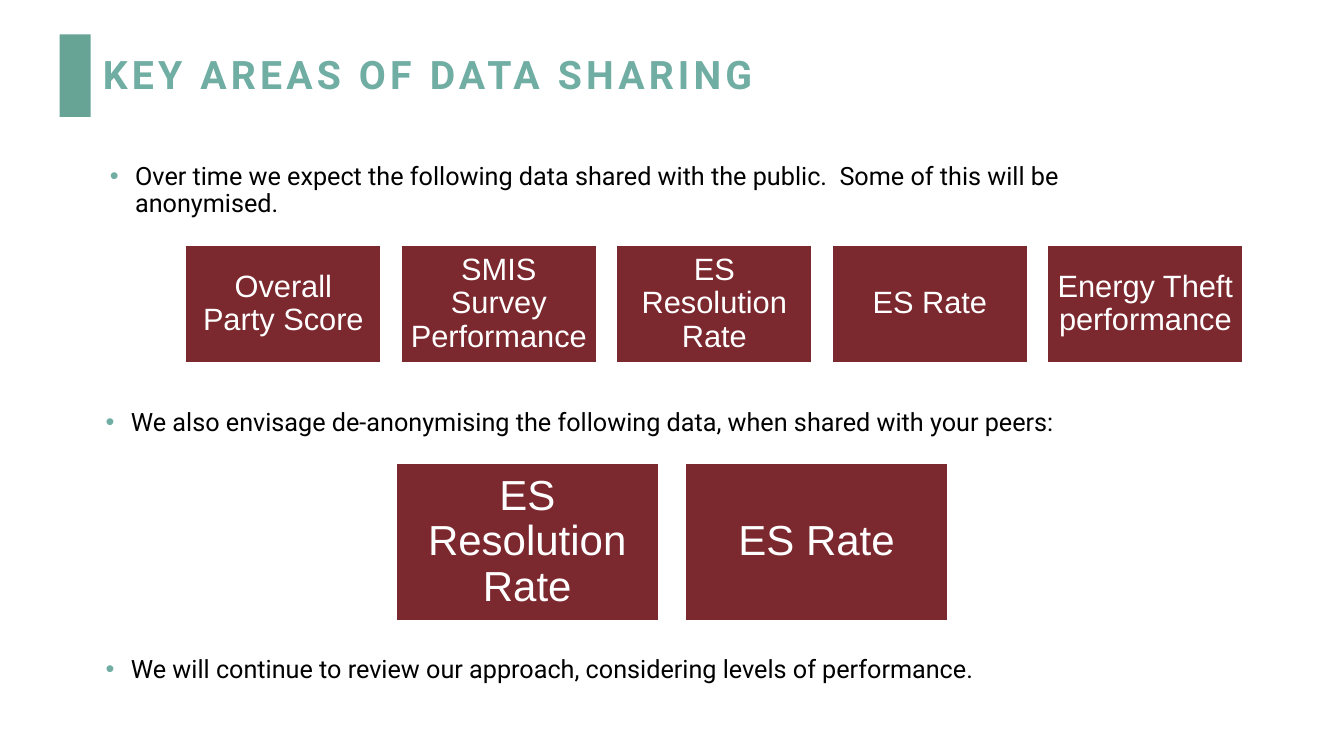
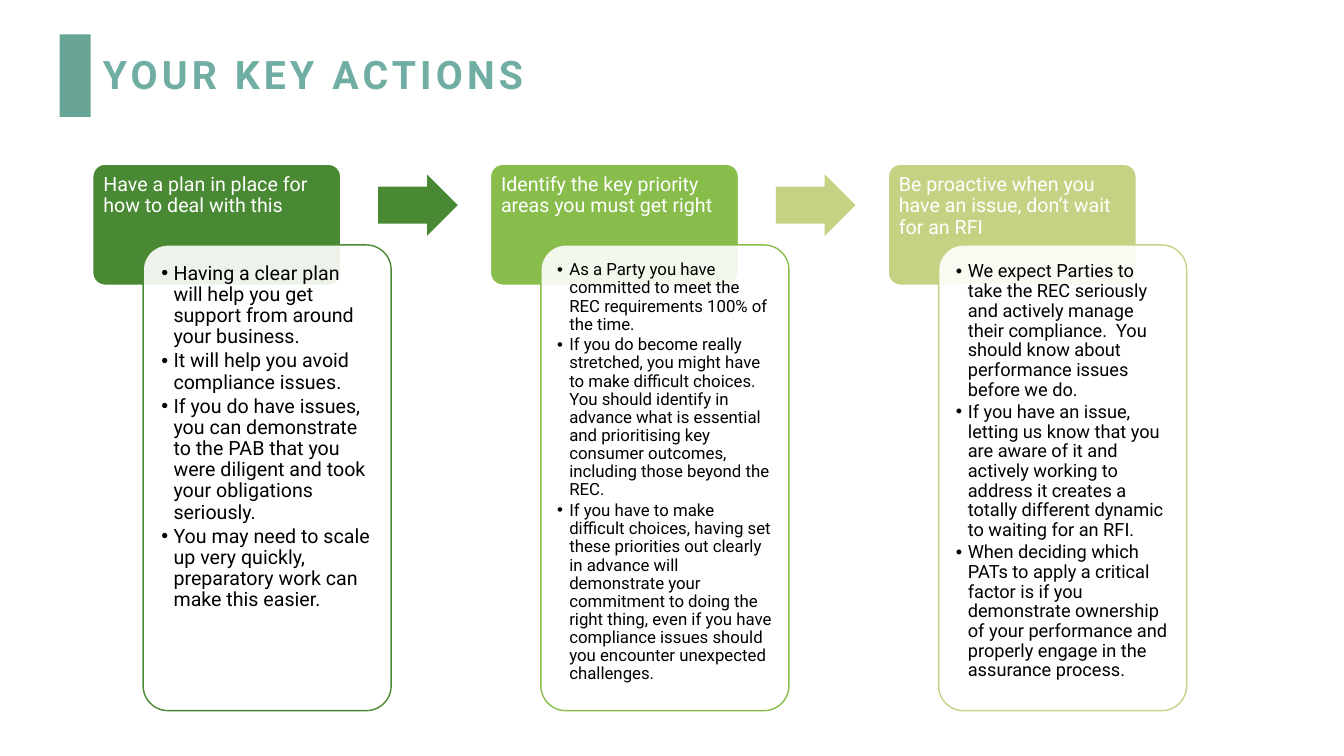
import pptx
import pptx.dml.color
import pptx.enum.shapes
import pptx.enum.text
import pptx.oxml.ns
import pptx.util
from dataclasses import dataclass
from lxml import etree

Inches = pptx.util.Inches
Pt = pptx.util.Pt
Shape = pptx.enum.shapes.MSO_SHAPE
Anchor = pptx.enum.text.MSO_ANCHOR
Align = pptx.enum.text.PP_ALIGN
qn = pptx.oxml.ns.qn


@dataclass(frozen=True)
class Theme:
    band: str = "68A495"
    accent: str = "70ADA3"
    tile: str = "7B282E"
    dark_green: str = "498934"
    green: str = "88BD4C"
    pale_green: str = "C4D383"
    white: str = "FFFFFF"
    black: str = "000000"
    font: str = "Roboto"
    tile_font: str = "Arial"
    title_size: int = 28
    title_tracking: int = 3
    body_size: int = 18
    header_size: int = 14
    line_spacing: float = 0.9


THEME = Theme()
TITLE_ONLY, TITLE_AND_CONTENT = 5, 1

BAND = (0.59, 0.34, 0.31, 0.82)
TITLE = (0.92, 0.4, 10.15, 0.72)

SHARING = {
    "title": "KEY AREAS OF DATA SHARING",
    "intro": ((0.99, 1.57, 10.08, 0.87),
              "Over time we expect the following data shared with the public.  "
              "Some of this will be anonymised."),
    "statements": [
        ((0.95, 4.02, 10.08, 0.4),
         "We also envisage de-anonymising the following data, when shared with your peers:"),
        ((0.95, 6.47, 10.08, 0.4),
         "We will continue to review our approach, considering levels of performance."),
    ],
    "tile_rows": [
        {"labels": ["Overall Party Score", "SMIS Survey Performance", "ES Resolution Rate",
                    "ES Rate", "Energy Theft performance"],
         "left": 1.84, "right": 12.33, "top": 2.43, "width": 1.94, "height": 1.17,
         "size": 22, "margin": 0.09},
        {"labels": ["ES Resolution Rate", "ES Rate"],
         "left": 3.93, "right": 9.4, "top": 4.6, "width": 2.6, "height": 1.56,
         "size": 30, "margin": 0.12},
    ],
}

ACTIONS_TITLE = "YOUR KEY ACTIONS"
ACTIONS = [
    {"header": "Have a plan in place for how to deal with this",
     "colour": THEME.dark_green, "arrow": THEME.dark_green, "size": 14, "margin": 0.11,
     "points": [
         "Having a clear plan will help you get support from around your business.",
         "It will help you avoid compliance issues.",
         "If you do have issues, you can demonstrate to the PAB that you were diligent "
         "and took your obligations seriously.",
         "You may need to scale up very quickly, preparatory work can make this easier."]},
    {"header": "Identify the key priority areas you must get right",
     "colour": THEME.green, "arrow": THEME.pale_green, "size": 12, "margin": 0.09,
     "points": [
         "As a Party you have committed to meet the REC requirements 100% of the time.",
         "If you do become really stretched, you might have to make difficult choices.  "
         "You should identify in advance what is essential and prioritising key consumer "
         "outcomes, including those beyond the REC.",
         "If you have to make difficult choices, having set these priorities out clearly in "
         "advance will demonstrate your commitment to doing the right thing, even if you have "
         "compliance issues should you encounter unexpected challenges."]},
    {"header": "Be proactive when you have an issue, don’t wait for an RFI",
     "colour": THEME.pale_green, "arrow": None, "size": 13, "margin": 0.1,
     "points": [
         "We expect Parties to take the REC seriously and actively manage their compliance.  "
         "You should know about performance issues before we do.",
         "If you have an issue, letting us know that you are aware of it and actively working "
         "to address it creates a totally different dynamic to waiting for an RFI.",
         "When deciding which PATs to apply a critical factor is if you demonstrate ownership "
         "of your performance and properly engage in the assurance process."]},
]
FIRST_COLUMN, LAST_COLUMN = 0.92, 8.81
HEADER_TOP, HEADER_WIDTH, HEADER_HEIGHT = 1.63, 2.46, 1.2
CARD_SHIFT, CARD_TOP, CARD_HEIGHT = 0.5, 2.43, 4.62
ARROW_SHIFT, ARROW_TOP, ARROW_WIDTH, ARROW_HEIGHT = 2.83, 1.73, 0.79, 0.61


def rgb(colour):
    return pptx.dml.color.RGBColor.from_string(colour)


def place(box, area):
    box.left, box.top, box.width, box.height = map(Inches, area)


def add_block(page, preset, area, fill, line=None):
    block = page.shapes.add_shape(preset, *map(Inches, area))
    block.shadow.inherit = False
    block.fill.solid()
    block.fill.fore_color.rgb = rgb(fill)
    if line:
        block.line.color.rgb = rgb(line)
        block.line.width = Pt(1)
    else:
        block.line.fill.background()
    return block


def add_bullet(para, indent, colour):
    properties = para._p.get_or_add_pPr()
    properties.set("marL", str(Inches(indent)))
    properties.set("indent", str(-Inches(indent)))
    tint = etree.SubElement(properties, qn("a:buClr"))
    etree.SubElement(tint, qn("a:srgbClr")).set("val", colour)
    etree.SubElement(properties, qn("a:buFont")).set("typeface", "Arial")
    etree.SubElement(properties, qn("a:buChar")).set("char", "•")


def write(box, lines, size, colour, font=THEME.font, bold=False, align=Align.LEFT,
          anchor=Anchor.TOP, margins=None, bullet=None, gap=0):
    """Fill a box with paragraphs; bullet is (indent, colour), margins are in inches."""
    frame = box.text_frame
    frame.text = "\n".join(lines)
    frame.word_wrap = True
    frame.auto_size = pptx.enum.text.MSO_AUTO_SIZE.NONE
    frame.vertical_anchor = anchor
    if margins:
        (frame.margin_left, frame.margin_top,
         frame.margin_right, frame.margin_bottom) = map(Inches, margins)
    for para in frame.paragraphs:
        if bullet:
            add_bullet(para, *bullet)
        para.alignment = align
        para.line_spacing = THEME.line_spacing
        para.space_before = Pt(0)
        para.space_after = Pt(gap)
        for span in para.runs:
            span.font.name = font
            span.font.size = Pt(size)
            span.font.bold = bold
            span.font.color.rgb = rgb(colour)


def add_page(deck, layout, title):
    page = deck.slides.add_slide(deck.slide_layouts[layout])
    heading = page.shapes.title
    place(heading, TITLE)
    write(heading, [title], THEME.title_size, THEME.accent, bold=True, anchor=Anchor.MIDDLE)
    for span in heading.text_frame.paragraphs[0].runs:
        span._r.get_or_add_rPr().set("spc", str(THEME.title_tracking * 100))
    return page


def move_to_master(deck, shape):
    shape.element.nvSpPr.cNvPr.set("id", "50")
    deck.slide_master.element.cSld.spTree.insert(2, shape.element)


def add_tile_row(page, row):
    count = len(row["labels"])
    pitch = (row["right"] - row["left"] - row["width"]) / (count - 1)
    for index, label in enumerate(row["labels"]):
        area = (row["left"] + index * pitch, row["top"], row["width"], row["height"])
        tile = add_block(page, Shape.RECTANGLE, area, THEME.tile, THEME.white)
        write(tile, [label], row["size"], THEME.white, THEME.tile_font, align=Align.CENTER,
              anchor=Anchor.MIDDLE, margins=[row["margin"]] * 4)


def add_statement(box, text):
    write(box, [text], THEME.body_size, THEME.black, bullet=(0.25, THEME.accent))


def add_action(page, left, action):
    header = add_block(page, Shape.ROUNDED_RECTANGLE,
                       (left, HEADER_TOP, HEADER_WIDTH, HEADER_HEIGHT),
                       action["colour"], THEME.white)
    header.adjustments[0] = 0.1
    write(header, [action["header"]], THEME.header_size, THEME.white,
          margins=(0.07, 0.07, 0.07, 0.06))

    card = add_block(page, Shape.ROUNDED_RECTANGLE,
                     (left + CARD_SHIFT, CARD_TOP, HEADER_WIDTH, CARD_HEIGHT),
                     THEME.white, action["colour"])
    card.adjustments[0] = 0.1
    fill_colour = card.element.spPr.find(qn("a:solidFill"))[0]
    etree.SubElement(fill_colour, qn("a:alpha")).set("val", "90000")
    write(card, action["points"], action["size"], THEME.black, margins=[action["margin"]] * 4,
          bullet=(0.12, THEME.black), gap=round(action["size"] * 0.15, 1))

    if action["arrow"]:
        arrow = add_block(page, Shape.RIGHT_ARROW,
                          (left + ARROW_SHIFT, ARROW_TOP, ARROW_WIDTH, ARROW_HEIGHT),
                          action["arrow"])
        arrow.adjustments[0] = 0.6
        arrow.adjustments[1] = 0.5


def build_sharing(deck):
    page = add_page(deck, TITLE_AND_CONTENT, SHARING["title"])
    area, text = SHARING["intro"]
    body = page.placeholders[1]
    place(body, area)
    add_statement(body, text)
    for area, text in SHARING["statements"]:
        add_statement(page.shapes.add_textbox(*map(Inches, area)), text)
    for row in SHARING["tile_rows"]:
        add_tile_row(page, row)
    return page


def build_actions(deck):
    page = add_page(deck, TITLE_ONLY, ACTIONS_TITLE)
    pitch = (LAST_COLUMN - FIRST_COLUMN) / (len(ACTIONS) - 1)
    for index, action in enumerate(ACTIONS):
        add_action(page, FIRST_COLUMN + index * pitch, action)


def main():
    deck = pptx.Presentation()
    deck.slide_width, deck.slide_height = Inches(13.33), Inches(7.5)
    page = build_sharing(deck)
    move_to_master(deck, add_block(page, Shape.RECTANGLE, BAND, THEME.band))
    build_actions(deck)
    deck.save("out.pptx")


if __name__ == "__main__":
    main()
